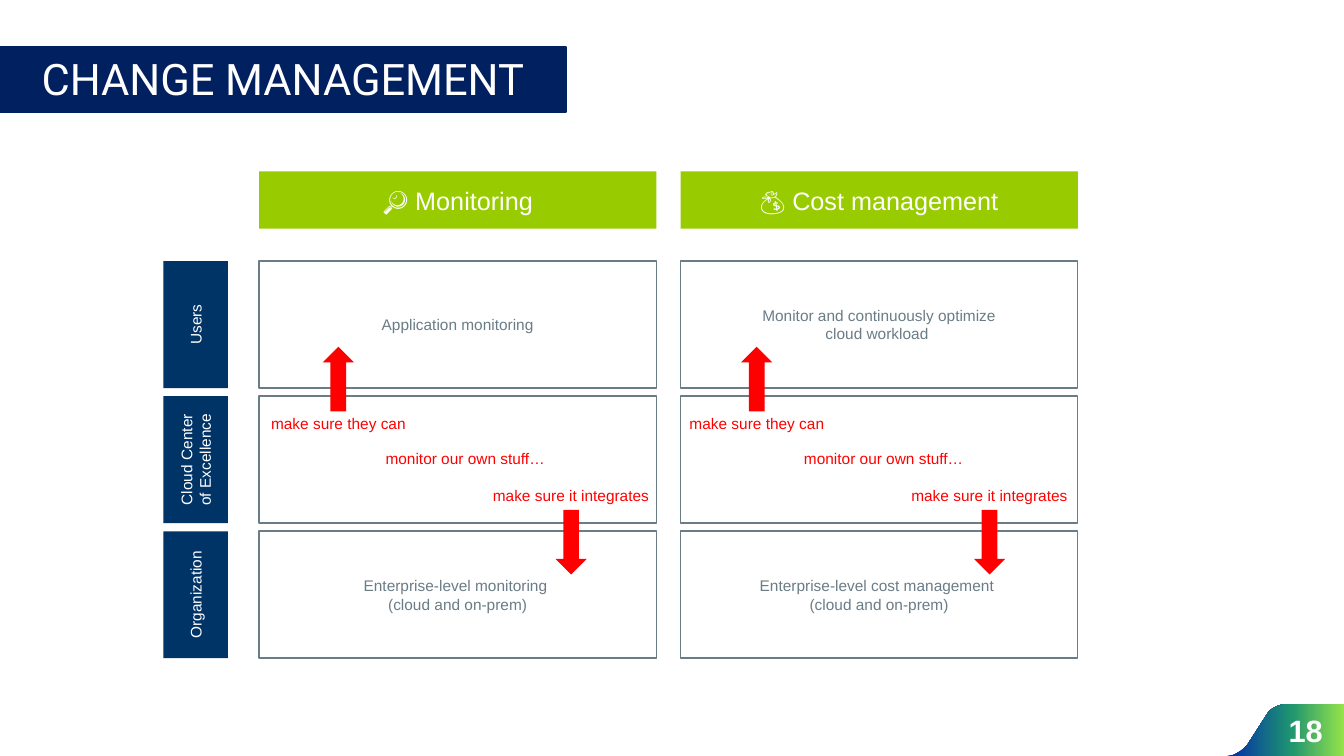
"""Build the change management slide: monitoring and cost duties on three levels."""
from copy import deepcopy
from dataclasses import dataclass
from typing import Optional

from pptx import Presentation
from pptx.dml.color import RGBColor
from pptx.enum.shapes import MSO_SHAPE as Preset
from pptx.enum.text import MSO_ANCHOR as Anchor, MSO_AUTO_SIZE as Fit, PP_ALIGN as Align
from pptx.oxml.ns import qn
from pptx.util import Pt

PX = 9144
WHITE = RGBColor(0xFF, 0xFF, 0xFF)
TITLE_NAVY = RGBColor(0x00, 0x20, 0x60)
LEVEL_NAVY = RGBColor(0x00, 0x33, 0x66)
LIME = RGBColor(0x99, 0xCC, 0x00)
SLATE = RGBColor(0x6A, 0x7C, 0x86)
RED = RGBColor(0xFF, 0x00, 0x00)
CORNER_STOPS = (
    (0, RGBColor(0x00, 0x2A, 0xAB)),
    (0.55, RGBColor(0x1F, 0x95, 0x70)),
    (1, RGBColor(0x95, 0xE3, 0x4A)),
)

COLUMN_LEFT, COLUMN_STEP, COLUMN_WIDTH = 257, 418, 394
NOTE_STEP = 415
ROW_TOP, ROW_STEP, ROW_HEIGHT = 259, 134, 126
LEVEL_CENTER, LEVEL_WIDTH = 194, 64


@dataclass(frozen=True)
class Box:
    left: int
    top: int
    width: int
    height: int

    def shifted(self, dx: int) -> "Box":
        """Return this box moved sideways."""
        return Box(self.left + dx, self.top, self.width, self.height)

    def emu(self) -> tuple[int, ...]:
        """Return left, top, width and height in EMU."""
        return tuple(v * PX for v in (self.left, self.top, self.width, self.height))


@dataclass(frozen=True)
class Topic:
    heading: str
    duties: tuple[str, str, str]


@dataclass(frozen=True)
class Note:
    text: str
    box: Box
    wrap: bool = False
    align: Align = Align.LEFT


@dataclass(frozen=True)
class Arrow:
    box: Box
    rotation: int = 0


LEVELS = ("Users", "Cloud Center of Excellence", "Organization")
TOPICS = (
    Topic("🔎 Monitoring", (
        "Application monitoring",
        "",
        "Enterprise-level monitoring \n(cloud and on-prem)",
    )),
    Topic("💰 Cost management", (
        "Monitor and continuously optimize\ncloud workload ",
        "",
        "Enterprise-level cost management \n(cloud and on-prem)",
    )),
)
ARROWS = (Arrow(Box(551, 506, 31, 64)), Arrow(Box(320, 344, 31, 64), 180))
NOTES = (
    Note("make sure they can", Box(259, 406, 154, 29)),
    Note("make sure it integrates", Box(479, 477, 176, 29)),
    Note("monitor our own stuff…", Box(304, 441, 315, 29), True, Align.CENTER),
)


def write(shape, text: str, *, size: int = 11, color: RGBColor = WHITE,
          font: str = "Arial", bold: bool = False, align: Align = Align.CENTER,
          anchor: Anchor = Anchor.MIDDLE, wrap: bool = True, fit: Fit = Fit.NONE,
          inset: Optional[int] = None) -> None:
    """Fill a shape with formatted text, one paragraph per line."""
    frame = shape.text_frame
    frame.text = text
    frame.word_wrap = wrap
    frame.auto_size = fit
    frame.vertical_anchor = anchor
    if inset is not None:
        frame.margin_left = frame.margin_right = inset * PX
        frame.margin_top = frame.margin_bottom = inset * PX
    for paragraph in frame.paragraphs:
        paragraph.alignment = align
        for run in paragraph.runs:
            run.font.name = font
            run.font.size = Pt(size)
            run.font.bold = bold
            run.font.color.rgb = color


def draw_shape(slide, preset: Preset, box: Box, *, fill: Optional[RGBColor] = None,
               line: Optional[RGBColor] = None, line_width: float = 1, rotation: int = 0):
    """Add a flat preset shape."""
    shape = slide.shapes.add_shape(preset, *box.emu())
    shape.shadow.inherit = False
    shape.rotation = rotation
    if fill is None:
        shape.fill.background()
    else:
        shape.fill.solid()
        shape.fill.fore_color.rgb = fill
    if line is None:
        shape.line.fill.background()
    else:
        shape.line.color.rgb = line
        shape.line.width = Pt(line_width)
    return shape


def bezier(*controls: tuple[int, int], steps: int = 12) -> list[tuple[float, float]]:
    """Return points along a cubic curve, without its start."""
    points = []
    for step in range(1, steps + 1):
        t = step / steps
        weights = ((1 - t) ** 3, 3 * t * (1 - t) ** 2, 3 * t * t * (1 - t), t ** 3)
        points.append(tuple(sum(w * c[axis] for w, c in zip(weights, controls))
                            for axis in (0, 1)))
    return points


def draw_corner(slide) -> None:
    """Draw the gradient page corner with the slide number."""
    outline = [(1333, 698), (1333, 750), (1217, 750), (1223, 749)]
    outline += bezier((1223, 749), (1228, 747), (1235, 743), (1239, 736))
    outline += [(1257, 708)]
    outline += bezier((1257, 708), (1257, 708), (1263, 698), (1280, 698))
    builder = slide.shapes.build_freeform(1280 * PX, 698 * PX)
    builder.add_line_segments([(round(x * PX), round(y * PX)) for x, y in outline])
    corner = builder.convert_to_shape()
    corner.shadow.inherit = False
    corner.line.fill.background()
    corner.fill.gradient()
    corner.fill.gradient_angle = 0
    stop_list = next(corner.element.iter(qn("a:gsLst")))
    stop_list.append(deepcopy(stop_list[-1]))
    for stop, (position, color) in zip(corner.fill.gradient_stops, CORNER_STOPS):
        stop.position = position
        stop.color.rgb = color
    number = slide.shapes.add_textbox(*Box(1257, 708, 76, 32).emu())
    write(number, "18", size=22, bold=True, wrap=False, inset=0)


def draw_topic(slide, topic: Topic, index: int) -> None:
    """Draw one column: its heading and a panel per level."""
    left = COLUMN_LEFT + index * COLUMN_STEP
    heading = draw_shape(slide, Preset.RECTANGLE, Box(left, 170, COLUMN_WIDTH, 57), fill=LIME)
    write(heading, topic.heading, size=18)
    for row, duty in enumerate(topic.duties):
        box = Box(left, ROW_TOP + row * ROW_STEP, COLUMN_WIDTH, ROW_HEIGHT)
        panel = draw_shape(slide, Preset.RECTANGLE, box, line=SLATE)
        if duty:
            write(panel, duty, color=SLATE)


def draw_notes(slide, index: int) -> None:
    """Draw the red arrows and remarks over one column."""
    shift = index * NOTE_STEP
    for arrow in ARROWS:
        draw_shape(slide, Preset.DOWN_ARROW, arrow.box.shifted(shift), fill=RED,
                   rotation=arrow.rotation)
    for note in NOTES:
        remark = slide.shapes.add_textbox(*note.box.shifted(shift).emu())
        write(remark, note.text, color=RED, align=note.align, anchor=Anchor.TOP,
              wrap=note.wrap, fit=Fit.SHAPE_TO_FIT_TEXT)


def main() -> None:
    """Build and save the slide."""
    deck = Presentation()
    deck.slide_width, deck.slide_height = 1333 * PX, 750 * PX
    slide = deck.slides.add_slide(deck.slide_layouts[6])
    draw_corner(slide)
    title = draw_shape(slide, Preset.RECTANGLE, Box(0, 47, 561, 64), fill=TITLE_NAVY,
                       line=TITLE_NAVY, line_width=1.5)
    write(title, "CHANGE MANAGEMENT", size=31, font="Roboto", anchor=Anchor.TOP,
          fit=Fit.SHAPE_TO_FIT_TEXT)
    for row, name in enumerate(LEVELS):
        center = ROW_TOP + row * ROW_STEP + ROW_HEIGHT // 2
        box = Box(LEVEL_CENTER - ROW_HEIGHT // 2, center - LEVEL_WIDTH // 2,
                  ROW_HEIGHT, LEVEL_WIDTH)
        level = draw_shape(slide, Preset.RECTANGLE, box, fill=LEVEL_NAVY, rotation=270)
        write(level, name)
    for index, topic in enumerate(TOPICS):
        draw_topic(slide, topic, index)
    for index in range(len(TOPICS)):
        draw_notes(slide, index)
    deck.save("out.pptx")


if __name__ == "__main__":
    main()
